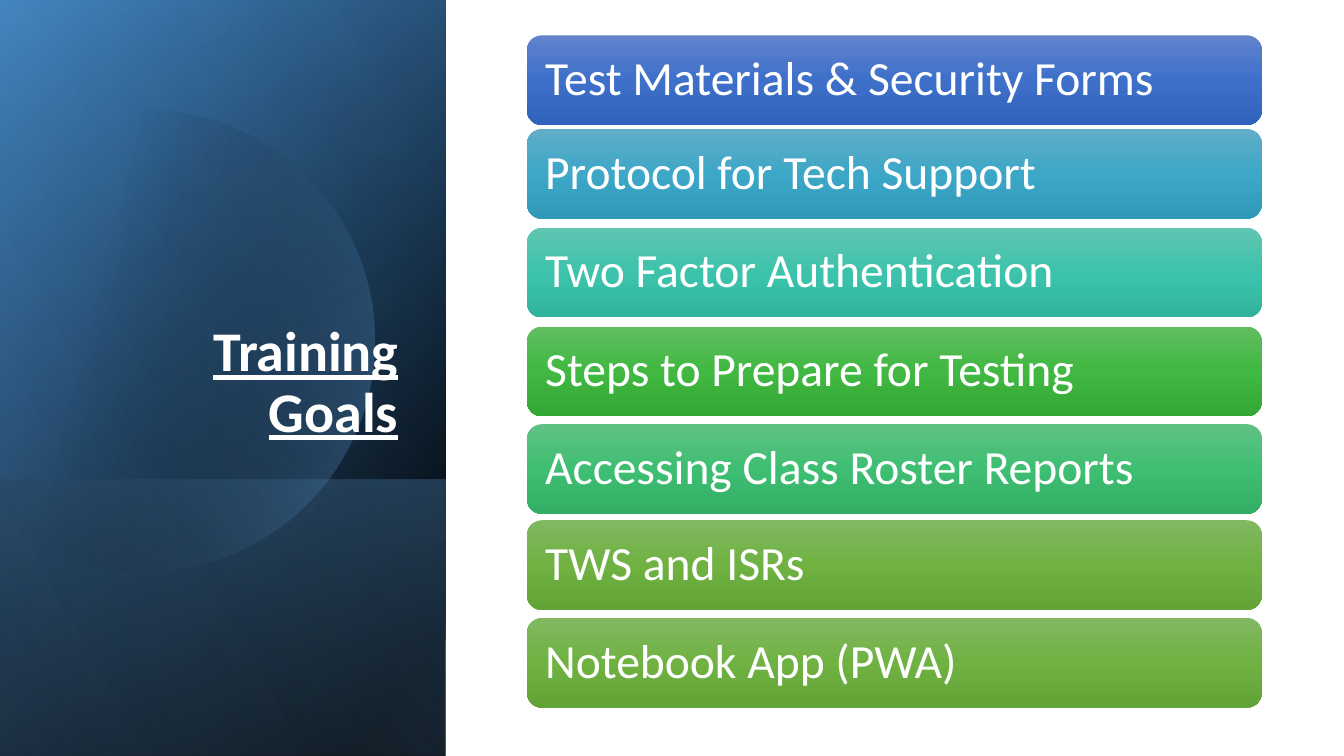
import math

from lxml import etree
from pptx import Presentation
from pptx.dml.color import RGBColor
from pptx.enum import shapes, text
from pptx.oxml.ns import qn
from pptx.util import Cm, Pt

FONT = "Calibri"
WHITE = "FFFFFF"
SIDEBAR = (0, 0, 11.23, 19.05)
SIDEBAR_FOOT = (0, 12.09, 11.23, 6.96)
GOALS_BOX = (13.28, 0, 18.52, 19.05)
BAR_HEIGHT = 2.26

BLUE = ("6183CB", "3E70CA", "3062BB")
CYAN = ("61ADC8", "3DA7C7", "3098B8")
TEAL = ("60C5B1", "3DC3AB", "30B39C")
GREEN = ("61BD61", "40B841", "34A835")
MINT = ("60C184", "3EBE73", "32AE65")
OLIVE = ("81B861", "6FB242", "62A336")

# Wording, distance from the top and gradient of each bar
GOALS = [
    ("Test Materials & Security Forms", 0.89, BLUE),
    ("Protocol for Tech Support", 3.25, CYAN),
    ("Two Factor Authentication", 5.74, TEAL),
    ("Steps to Prepare for Testing", 8.23, GREEN),
    ("Accessing Class Roster Reports", 10.69, MINT),
    ("TWS and ISRs", 13.11, OLIVE),
    ("Notebook App (PWA)", 15.57, OLIVE),
]


def color(value):
    return RGBColor.from_string(value)


def fill_gradient(shape, stops, angle):
    """Fill with (position %, colour, opacity %) stops, angle clockwise in degrees."""
    shape.shadow.inherit = False
    shape.line.fill.background()
    shape.fill.gradient()
    gradient = shape._element.spPr.find(qn("a:gradFill"))
    gradient.set("rotWithShape", "1")
    for child in list(gradient):
        gradient.remove(child)
    stop_list = etree.SubElement(gradient, qn("a:gsLst"))
    for position, value, opacity in stops:
        stop = etree.SubElement(stop_list, qn("a:gs"), pos=str(position * 1000))
        tint = etree.SubElement(stop, qn("a:srgbClr"), val=value)
        if opacity < 100:
            etree.SubElement(tint, qn("a:alpha"), val=str(opacity * 1000))
    etree.SubElement(gradient, qn("a:lin"), ang=str(angle * 60000), scaled="0")


def write(shape, words, size, align=text.PP_ALIGN.LEFT,
          anchor=text.MSO_ANCHOR.MIDDLE, bold=False, underline=False):
    frame = shape.text_frame
    frame.word_wrap = True
    frame.vertical_anchor = anchor
    paragraph = frame.paragraphs[0]
    paragraph.text = words
    paragraph.alignment = align
    paragraph.line_spacing = 0.9
    font = paragraph.runs[0].font
    font.name = FONT
    font.size = Pt(size)
    font.bold = bold
    font.underline = underline
    font.color.rgb = color(WHITE)


def add_tint(slide, box, stops, angle):
    """Cover the box with a rectangle that is turned a quarter and mirrored."""
    left, top, width, height = box
    shift = (width - height) / 2
    tint = slide.shapes.add_shape(
        shapes.MSO_SHAPE.RECTANGLE,
        Cm(left + shift), Cm(top - shift), Cm(height), Cm(width))
    tint.rotation = 90
    tint._element.spPr.find(qn("a:xfrm")).set("flipH", "1")
    fill_gradient(tint, stops, angle)


def add_disc(slide, box):
    """Add a faint disc that is cut off by the left side of the box."""
    left, top = box[:2]
    center_x, center_y, radius = left + 3.63, top + 8.59, 5.82
    reach = math.acos((left - center_x) / radius)
    steps = 90
    angles = [reach * (2 * step / steps - 1) for step in range(steps + 1)]
    points = [(Cm(center_x + radius * math.cos(angle)),
               Cm(center_y + radius * math.sin(angle))) for angle in angles]
    builder = slide.shapes.build_freeform(*points[0])
    builder.add_line_segments(points[1:], close=True)
    fill_gradient(builder.convert_to_shape(),
                  [(29, "000000", 0), (100, "5B9BD5", 43)], 14)


def add_sidebar(slide, box):
    add_tint(slide, box, [(8, "000000", 100), (100, "2E75B6", 100)], 50)
    add_tint(slide, box, [(0, "000000", 0), (99, "5B9BD5", 46)], 30)
    add_tint(slide, SIDEBAR_FOOT, [(2, "5B9BD5", 29), (100, "000000", 30)], 130)
    add_disc(slide, box)
    add_tint(slide, box, [(0, "000000", 0), (99, "9DC3E6", 11)], 120)
    left, top = box[:2]
    title = slide.shapes.add_textbox(
        Cm(left + 1.69), Cm(top + 4.67), Cm(8.6), Cm(6.65))
    write(title, "Training Goals", 40, align=text.PP_ALIGN.RIGHT,
          anchor=text.MSO_ANCHOR.BOTTOM, bold=True, underline=True)


def add_goals(slide, box):
    left, top, width, _ = box
    for words, offset, colors in GOALS:
        bar = slide.shapes.add_shape(
            shapes.MSO_SHAPE.ROUNDED_RECTANGLE,
            Cm(left), Cm(top + offset), Cm(width), Cm(BAR_HEIGHT))
        stops = [(position, value, 100)
                 for position, value in zip((0, 50, 100), colors)]
        fill_gradient(bar, stops, 90)
        # The rounded corners already inset the text by about 0.11 cm
        bar.text_frame.margin_left = bar.text_frame.margin_right = Cm(0.35)
        write(bar, words, 34)


def main():
    presentation = Presentation()
    presentation.slide_width = Cm(33.87)
    presentation.slide_height = Cm(19.05)
    slide = presentation.slides.add_slide(presentation.slide_layouts[6])
    add_sidebar(slide, SIDEBAR)
    add_goals(slide, GOALS_BOX)
    presentation.save("out.pptx")


if __name__ == "__main__":
    main()
